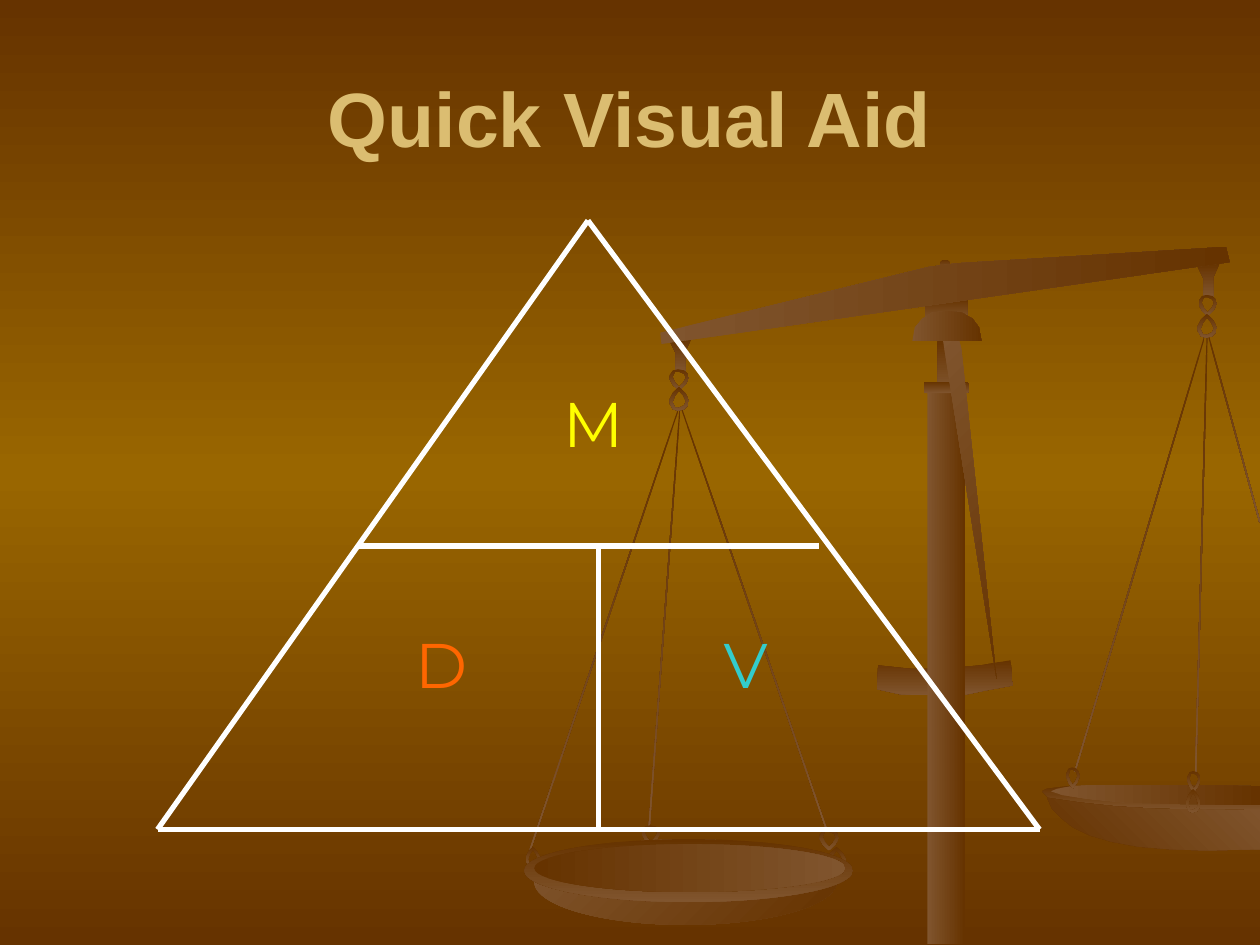
from copy import deepcopy

from lxml import etree
from pptx import Presentation
from pptx.dml.color import RGBColor
from pptx.enum.shapes import MSO_CONNECTOR, MSO_SHAPE
from pptx.enum.text import MSO_ANCHOR, PP_ALIGN
from pptx.oxml.ns import qn
from pptx.util import Pt

RECT, OVAL, ROUND = MSO_SHAPE.RECTANGLE, MSO_SHAPE.OVAL, MSO_SHAPE.ROUNDED_RECTANGLE
STRAIGHT = MSO_CONNECTOR.STRAIGHT
TOP, MIDDLE = MSO_ANCHOR.TOP, MSO_ANCHOR.MIDDLE
CENTER = PP_ALIGN.CENTER

DARK, LIGHT, GOLD = "663300", "80552E", "996600"
DOWN = (DARK, LIGHT, 90)
LEFT_LIT = (LIGHT, DARK, 0)
RIGHT_LIT = (DARK, LIGHT, 0)
DIAGONAL = (LIGHT, DARK, 45)
BOWL_LIT = (DARK, LIGHT, 315)

ROPES = [(650.9, 187.2, 259.2, 16.6), (686.2, 191.5, 249.8, 1.5),
         (704.9, 190.1, 110.2, 344.6), (430.6, 226.8, 254.2, 341),
         (344.9, 227.5, 265, 18.6), (379.4, 234, 238.3, 4.2)]
FOOT = [(501.8, 380.2), (521.3, 382.3), (532.1, 382.3), (545, 381.6), (560.2, 380.2),
        (577.4, 377.3), (578.9, 391.7), (563, 394.6), (553, 396.7), (540.7, 397.4),
        (527.8, 397.4), (514.1, 396.7), (501.1, 393.8)]
RIGHT_RIM = [(689.8, 449.3), (645.8, 449.3), (630, 448.6), (609.1, 449.3), (598.3, 450.7),
             (595.4, 452.2), (599, 455.8), (606.2, 457.9), (621.4, 460.1), (643.7, 462.2),
             (673.2, 463.7), (720, 464.4), (720, 450.7)]
RIGHT_BOWL = [(598.3, 455.8), (601.2, 462.2), (606.2, 467.3), (613.4, 473), (622.8, 477.4),
              (635, 481), (650.2, 483.8), (668.2, 485.3), (689, 486), (720, 485.3),
              (720, 463), (661, 462.2), (637.9, 460.8), (617, 458.6)]
RIGHT_INSIDE = [(688.3, 448.6), (625.7, 448.6), (612.7, 449.3), (604.1, 450.7),
                (600.5, 452.2), (607, 454.3), (621.4, 456.5), (643, 458.6),
                (671.8, 459.4), (720, 460.1), (720, 449.3)]
BEAM = [(700.6, 141.1), (702.7, 149.8), (378, 196.6), (377.3, 190.1),
        (530.6, 152.6), (546.5, 150.5)]
POINTER = [(569.5, 388.1), (540, 201.6), (538.6, 193), (547.2, 190.8), (549.4, 199.4)]
DOME = [(541.4, 177.8), (549.4, 178.6), (555.8, 182.2), (559.4, 187.2), (560.9, 195.1),
        (521.3, 195.1), (522.7, 187.2), (527, 182.2), (532.8, 178.6)]

HANGER = [(1, 0), (0, 0.07), (0.28, 0.44), (0.28, 1), (0.72, 1), (0.72, 0.41)]
HANGER_BOXES = [(382.3, 193, 13, 19.4), (684, 150.5, 13, 19.4)]
LINK_OUTER = [(0.5, 1), (0.82, 0.72), (1, 0.42), (0.92, 0.2), (0.75, 0.06), (0.45, 0),
              (0.2, 0.06), (0.05, 0.27), (0.02, 0.45), (0.2, 0.75)]
LINK_INNER = [(0.5, 0.83), (0.3, 0.62), (0.18, 0.36), (0.3, 0.13), (0.5, 0.12),
              (0.76, 0.22), (0.84, 0.4), (0.7, 0.64)]
BACK_LINKS = [(609.1, 438.5, 7.9, 12.2, False), (382.3, 211, 11.5, 12.2, False),
              (382.3, 221, 11.5, 13.7, True), (684.7, 168.5, 10.8, 12.2, False),
              (684, 179.3, 11.5, 13.7, True), (678.2, 440.6, 7.9, 12.2, False),
              (366.5, 471.6, 10.8, 11.5, False), (472.3, 483.8, 11.5, 13.7, True),
              (300.2, 483.8, 8.6, 11.5, True)]
FRONT_LINKS = [(468, 473.8, 11.5, 12.2, False), (677.5, 450.7, 8.6, 13.7, True)]

APEX, BASE_LEFT, BASE_RIGHT = (336, 126), (90, 474), (594, 474)
TRIANGLE_LINES = [(APEX, BASE_LEFT), (APEX, BASE_RIGHT), (BASE_LEFT, BASE_RIGHT),
                  ((204, 312), (468, 312)), ((342, 312), (342, 474))]
LETTERS = [("D", (186, 354, 132, 96), "FF6600"), ("M", (294, 216, 90, 84), "FFFF00"),
           ("V", (360, 354, 132, 96), "33CCCC")]


def rgb(value):
    """Turn a hex string into a colour."""
    return RGBColor.from_string(value)


def set_gradient(fill, start, end, angle):
    """Give a fill two stops and a clockwise angle."""
    fill.gradient()
    fill.gradient_angle = (360 - angle) % 360
    for stop, colour in zip(fill.gradient_stops, (start, end)):
        stop.color.rgb = rgb(colour)


def set_background(s):
    """Fade the slide from dark to gold and back to dark."""
    fill = s.background.fill
    set_gradient(fill, DARK, GOLD, 90)
    fill.gradient_stops[1].position = 0.5
    stops = s.element.find(".//" + qn("a:gsLst"))
    last = deepcopy(stops[0])
    last.set("pos", "100000")
    stops.append(last)


def finish(sp, gradient):
    """Apply the gradient and drop line and shadow."""
    set_gradient(sp.fill, *gradient)
    sp.line.fill.background()
    sp.shadow.inherit = False


def add_part(s, kind, box, gradient, rotation=0):
    """Add a preset shape of the scale."""
    sp = s.shapes.add_shape(kind, *map(Pt, box))
    sp.rotation = rotation
    finish(sp, gradient)


def add_outline(s, contours, gradient):
    """Add a closed outline; further contours cut holes."""
    first, *holes = [[(Pt(x), Pt(y)) for x, y in c] for c in contours]
    builder = s.shapes.build_freeform(*first[0])
    builder.add_line_segments(first[1:])
    for hole in holes:
        builder.move_to(*hole[0])
        builder.add_line_segments(hole[1:])
    finish(builder.convert_to_shape(), gradient)


def fit(points, x, y, w, h, flip=False):
    """Scale unit points into a box, upside down if asked."""
    return [(x + u * w, y + (1 - v if flip else v) * h) for u, v in points]


def add_links(s, boxes):
    """Add chain links, each a ring with a hole."""
    for box in boxes:
        add_outline(s, [fit(LINK_OUTER, *box), fit(LINK_INNER, *box)], DOWN)


def add_scale(s):
    """Draw the balance scale from back to front."""
    add_part(s, RECT, (528.5, 170.6, 24.5, 13), DOWN)
    add_part(s, OVAL, (537.1, 148.3, 5.8, 5.8), DOWN)
    for x, y, length, rotation in ROPES:
        add_part(s, RECT, (x, y, 0.7, length), DOWN, rotation)
    for points, gradient in ((FOOT, DOWN), (RIGHT_RIM, DOWN), (RIGHT_BOWL, BOWL_LIT),
                             (RIGHT_INSIDE, LEFT_LIT)):
        add_outline(s, [points], gradient)
    for box in HANGER_BOXES:
        add_outline(s, [fit(HANGER, *box)], DOWN)
    add_links(s, BACK_LINKS)
    add_outline(s, [BEAM], LEFT_LIT)
    add_part(s, OVAL, (305.3, 479.5, 172.8, 49), DIAGONAL)
    add_part(s, OVAL, (299.5, 479.5, 187.9, 36), DOWN)
    add_part(s, OVAL, (305.3, 482.4, 177.8, 27.4), RIGHT_LIT)
    add_links(s, FRONT_LINKS)
    add_part(s, RECT, (529.9, 221.8, 21.6, 317.5), LEFT_LIT)
    add_part(s, RECT, (535.7, 193, 9.4, 30.2), DOWN)
    add_part(s, ROUND, (527.8, 218.2, 25.9, 6.5), DOWN)
    add_outline(s, [POINTER], DIAGONAL)
    add_outline(s, [DOME], LEFT_LIT)


def add_line(s, start, end):
    """Add a white line without a shadow."""
    line = s.shapes.add_connector(STRAIGHT, *map(Pt, start + end))
    line.line.color.rgb = rgb("FFFFFF")
    line.line.width = Pt(3)
    etree.SubElement(line._element.spPr, qn("a:effectLst"))


def add_text(s, text, box, font, size, colour, bold=False, anchor=TOP, wrap=False):
    """Add one centred line of text."""
    tf = s.shapes.add_textbox(*map(Pt, box)).text_frame
    tf.word_wrap = wrap
    tf.vertical_anchor = anchor
    tf.text = text
    p = tf.paragraphs[0]
    p.alignment = CENTER
    r = p.runs[0]
    r.font.name, r.font.size, r.font.bold = font, Pt(size), bold
    r.font.color.rgb = rgb(colour)


def main():
    """Build and save the slide."""
    prs = Presentation()
    prs.slide_width, prs.slide_height = Pt(720), Pt(540)
    s = prs.slides.add_slide(prs.slide_layouts[6])
    set_background(s)
    add_scale(s)
    add_text(s, "Quick Visual Aid", (36, 21.6, 648, 90), "Arial", 44, "DBBD71",
             bold=True, anchor=MIDDLE, wrap=True)
    for start, end in TRIANGLE_LINES:
        add_line(s, start, end)
    for letter, box, colour in LETTERS:
        add_text(s, letter, box, "Montserrat", 36, colour)
    prs.save("out.pptx")


if __name__ == "__main__":
    main()
